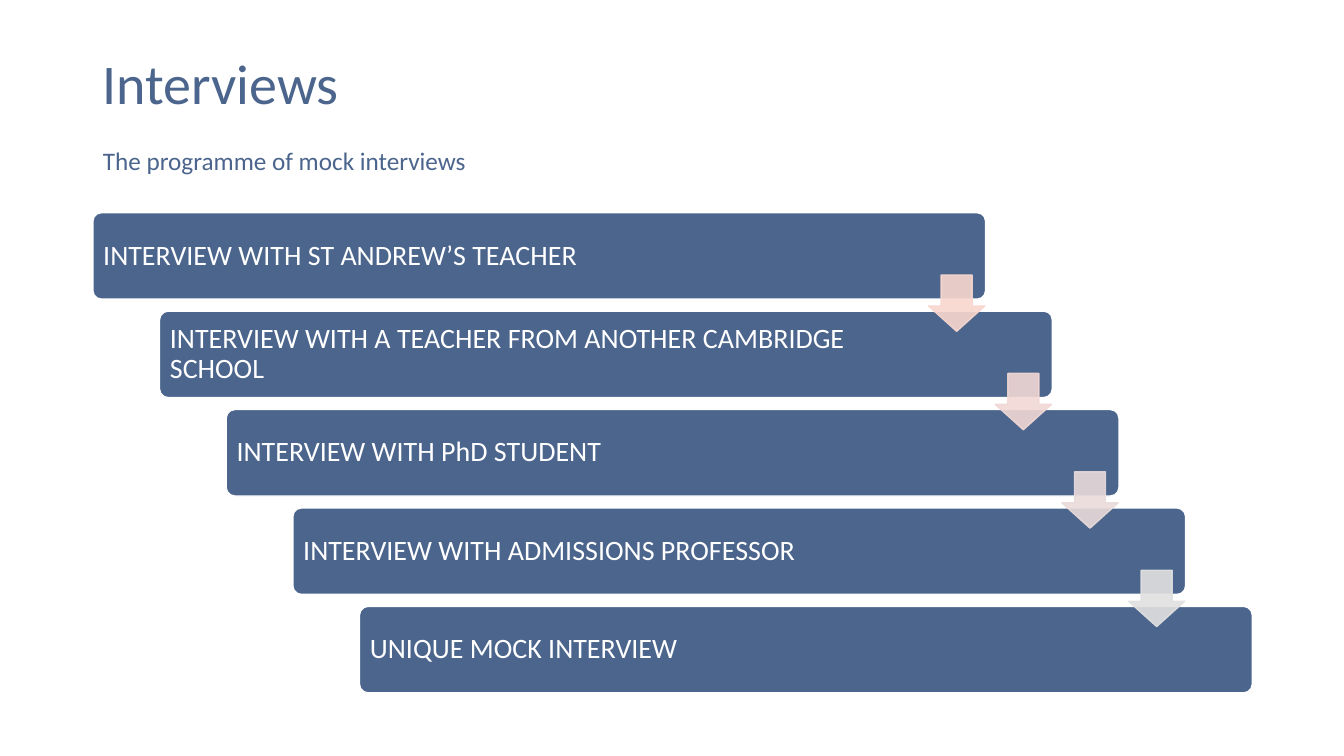
from dataclasses import dataclass

from lxml import etree
from pptx import Presentation
from pptx import util as u
from pptx.dml.color import RGBColor
from pptx.enum import shapes, text
from pptx.oxml.ns import qn

FONT = "Calibri"
COLOURS = {"navy": "4B658D", "white": "FFFFFF"}
STEP_X, STEP_Y = 1.68, 2.48
BAR_LEFT, BAR_TOP, BAR_WIDTH, BAR_HEIGHT = 2.34, 5.36, 22.5, 2.18
ARROW_LEFT, ARROW_TOP, ARROW_SIZE = 23.4, 6.93, 1.42
ARROW_OPACITY = 90


@dataclass
class Stage:
    label: str
    arrow_colour: str | None = None


STAGES = [
    Stage("INTERVIEW WITH ST ANDREW’S TEACHER", "F8D7CE"),
    Stage("INTERVIEW WITH A TEACHER FROM ANOTHER CAMBRIDGE SCHOOL", "F1D8D4"),
    Stage("INTERVIEW WITH PhD STUDENT", "E9DBDA"),
    Stage("INTERVIEW WITH ADMISSIONS PROFESSOR", "E1E1E1"),
    Stage("UNIQUE MOCK INTERVIEW"),
]


def write(shape, wording: str, size: float, colour: str):
    """Put one left-aligned, vertically centred paragraph in a shape."""
    frame = shape.text_frame
    frame.text = wording
    frame.word_wrap = True
    frame.auto_size = text.MSO_AUTO_SIZE.NONE
    frame.vertical_anchor = text.MSO_ANCHOR.MIDDLE
    para = frame.paragraphs[0]
    para.alignment = text.PP_ALIGN.LEFT
    para.space_before = u.Pt(0)
    para.font.name = FONT
    para.font.size = u.Pt(size)
    para.font.color.rgb = RGBColor.from_string(colour)
    return para


def place_heading(box, wording: str, size: float, top: float, width: float, height: float) -> None:
    box.left, box.top = u.Cm(BAR_LEFT), u.Cm(top)
    box.width, box.height = u.Cm(width), u.Cm(height)
    write(box, wording, size, COLOURS["navy"])


def add_block(page, kind, left: float, top: float, width: float, height: float,
              fill: str, line: str):
    block = page.shapes.add_shape(kind, u.Cm(left), u.Cm(top), u.Cm(width), u.Cm(height))
    block.shadow.inherit = False
    block.fill.solid()
    block.fill.fore_color.rgb = RGBColor.from_string(fill)
    block.line.color.rgb = RGBColor.from_string(line)
    block.line.width = u.Pt(1)
    return block


def add_bar(page, position: int, stage: Stage) -> None:
    bar = add_block(page, shapes.MSO_SHAPE.ROUNDED_RECTANGLE,
                    BAR_LEFT + position * STEP_X, BAR_TOP + position * STEP_Y,
                    BAR_WIDTH, BAR_HEIGHT, COLOURS["navy"], COLOURS["white"])
    bar.adjustments[0] = 0.1
    para = write(bar, stage.label, 20, COLOURS["white"])
    para.line_spacing = 0.9
    frame = bar.text_frame
    # The wide right margin keeps the label clear of the arrows
    frame.margin_left, frame.margin_right = u.Cm(0.2), u.Cm(3.3)


def add_arrow(page, position: int, colour: str) -> None:
    arrow = add_block(page, shapes.MSO_SHAPE.DOWN_ARROW,
                      ARROW_LEFT + position * STEP_X, ARROW_TOP + position * STEP_Y,
                      ARROW_SIZE, ARROW_SIZE, colour, colour)
    arrow.adjustments[0], arrow.adjustments[1] = 0.55, 0.45
    for tint in arrow.element.spPr.iter(qn("a:srgbClr")):
        etree.SubElement(tint, qn("a:alpha"), val=str(ARROW_OPACITY * 1000))


def main() -> None:
    deck = Presentation()
    deck.slide_width, deck.slide_height = u.Cm(33.87), u.Cm(19.05)
    page = deck.slides.add_slide(deck.slide_layouts[0])
    place_heading(page.shapes.title, "Interviews", 40, 1.09, 9.8, 1.96)
    place_heading(page.placeholders[1], "The programme of mock interviews", 18, 3.53, 15.24, 1.02)
    for position, stage in enumerate(STAGES):
        add_bar(page, position, stage)
    for position, stage in enumerate(STAGES):
        if stage.arrow_colour:
            add_arrow(page, position, stage.arrow_colour)
    deck.save("out.pptx")


if __name__ == "__main__":
    main()
